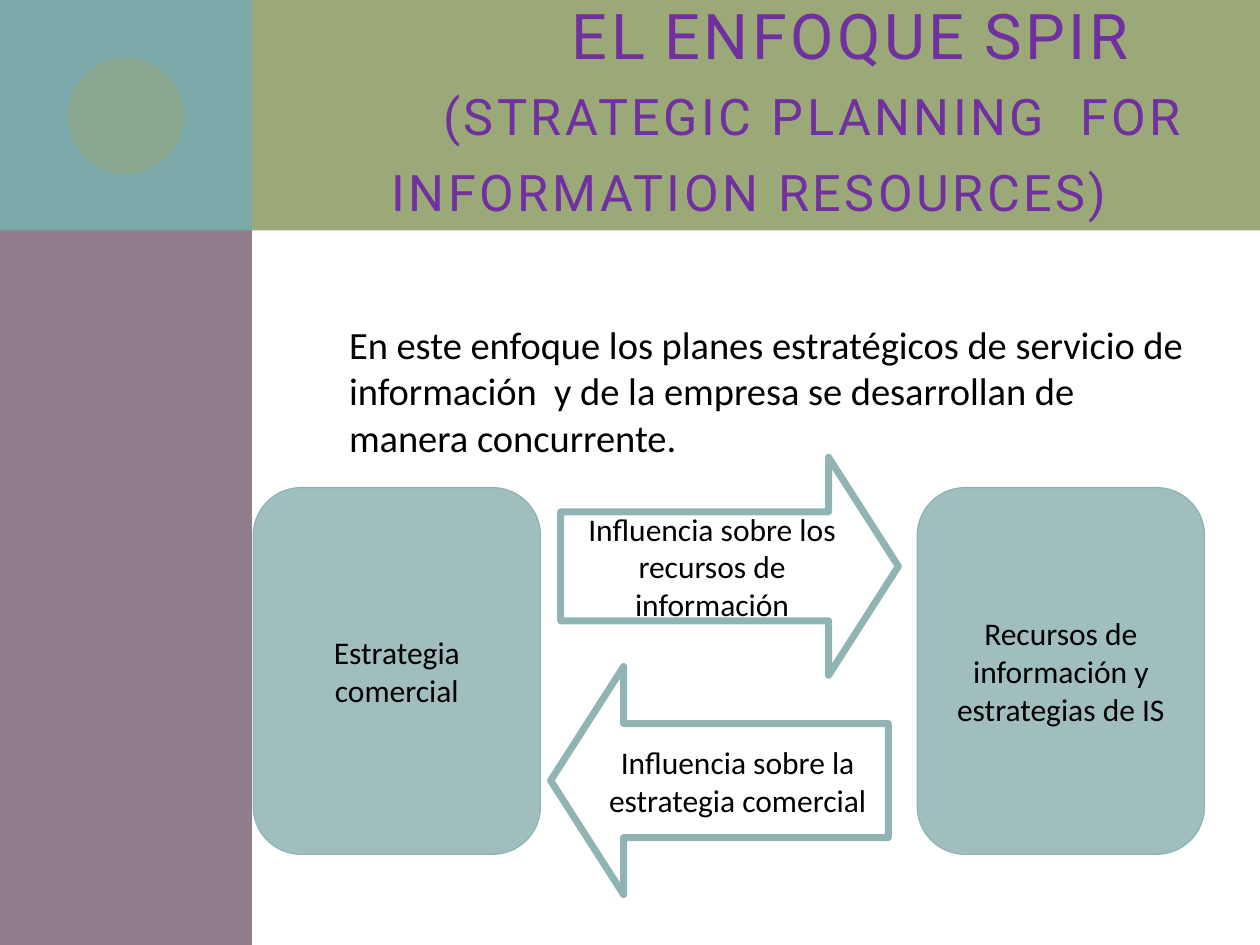
import pptx
import pptx.util
import pptx.dml.color
import pptx.enum.shapes
import pptx.enum.text
import pptx.oxml
import pptx.oxml.ns

Inches, Pt = pptx.util.Inches, pptx.util.Pt
RGBColor = pptx.dml.color.RGBColor
SHAPE = pptx.enum.shapes.MSO_SHAPE
ALIGN = pptx.enum.text.PP_ALIGN
ANCHOR = pptx.enum.text.MSO_ANCHOR
qn = pptx.oxml.ns.qn

OLIVE = RGBColor(0x9A, 0xA9, 0x77)
MAUVE = RGBColor(0x90, 0x7E, 0x8C)
TEAL = RGBColor(0x7B, 0xA8, 0xA9)
PURPLE = RGBColor(0x70, 0x30, 0xA0)
BLACK = RGBColor(0, 0, 0)
WHITE = RGBColor(0xFF, 0xFF, 0xFF)
BOX_FILL = RGBColor(0xA1, 0xBE, 0xBE)
BOX_LINE = RGBColor(0x8F, 0xB4, 0xB5)
ARROW_LINE = RGBColor(0x90, 0xB3, 0xB4)

# Content
TITLE = "EL ENFOQUE SPIR\v(strategic planning  for information resources)"
BODY = ("En este enfoque los planes estratégicos de servicio de información  "
        "y de la empresa se desarrollan de manera concurrente.")
BANDS = [  # preset, place, fill
    (SHAPE.RECTANGLE, (0.5, 0, 9.5, 1.83), OLIVE),
    (SHAPE.RECTANGLE, (0, 0, 2, 7.5), MAUVE),
    (SHAPE.RECTANGLE, (0, 0, 2, 1.83), TEAL),
    (SHAPE.OVAL, (0.54, 0.46, 0.92, 0.92), OLIVE),
]
BOXES = [  # left, text
    (2.01, "Estrategia comercial"),
    (7.28, "Recursos de información y estrategias de IS"),
]
ARROWS = [  # preset, place, text
    (SHAPE.RIGHT_ARROW, (4.45, 3.63, 2.68, 1.73),
     "Influencia sobre los recursos de información"),
    (SHAPE.LEFT_ARROW, (4.37, 5.29, 2.68, 1.81),
     "Influencia sobre la estrategia comercial"),
]


def set_font(paragraph, name, size, color):
    paragraph.font.name = name
    paragraph.font.size = Pt(size)
    paragraph.font.color.rgb = color


def add_shape(preset, place, fill):
    shape = slide.shapes.add_shape(preset, *map(Inches, place))
    shape.shadow.inherit = False
    shape.fill.solid()
    shape.fill.fore_color.rgb = fill
    shape.line.fill.background()
    return shape


def add_labelled(preset, place, fill, line, width, text):
    shape = add_shape(preset, place, fill)
    shape.line.color.rgb = line
    shape.line.width = Pt(width)
    frame = shape.text_frame
    frame.word_wrap = True
    frame.vertical_anchor = ANCHOR.MIDDLE
    frame.text = text
    frame.paragraphs[0].alignment = ALIGN.CENTER
    set_font(frame.paragraphs[0], "Calibri", 18, BLACK)
    return shape


def fill_placeholder(holder, place, text, anchor):
    holder.left, holder.top, holder.width, holder.height = map(Inches, place)
    frame = holder.text_frame
    frame.text = text
    frame.word_wrap = True
    frame.auto_size = pptx.enum.text.MSO_AUTO_SIZE.NONE
    frame.vertical_anchor = anchor
    return frame.paragraphs[0]


deck = pptx.Presentation()
deck.slide_width, deck.slide_height = Inches(10), Inches(7.5)
slide = deck.slides.add_slide(deck.slide_layouts[1])
title, body = slide.placeholders

# Background bands, moved behind the placeholders
for position, (preset, place, fill) in enumerate(BANDS):
    band = add_shape(preset, place, fill)
    slide.shapes._spTree.insert(2 + position, band._element)
circle_color = band._element.spPr.find(qn("a:solidFill"))[0]
pptx.oxml.ns  # namespace helpers for the transparency below
alpha = circle_color.makeelement(qn("a:alpha"), {"val": "50000"})
circle_color.append(alpha)

# Title in spaced small capitals
heading = fill_placeholder(title, (2.67, 0.25, 6.83, 1.25), TITLE, ANCHOR.MIDDLE)
heading.alignment = ALIGN.RIGHT
set_font(heading, "Roboto", 36, PURPLE)
for run in heading.runs:
    properties = run._r.get_or_add_rPr()
    properties.set("cap", "small")
    properties.set("spc", "200")

# Introductory paragraph without a bullet
intro = fill_placeholder(body, (2.67, 2.5, 6.83, 4.2), BODY, ANCHOR.TOP)
intro.space_before = Pt(18)
set_font(intro, "Calibri", 22, BLACK)
layout = intro._p.get_or_add_pPr()
layout.set("marL", "0")
layout.set("indent", "0")
no_bullet = layout.makeelement(qn("a:buNone"), {})
layout.find(qn("a:spcBef")).addnext(no_bullet)

# Strategy boxes and the arrows between them
for left, text in BOXES:
    add_labelled(SHAPE.ROUNDED_RECTANGLE, (left, 3.87, 2.28, 2.91),
                 BOX_FILL, BOX_LINE, 0.75, text)
for preset, place, text in ARROWS:
    arrow = add_labelled(preset, place, WHITE, ARROW_LINE, 4, text)
    arrow.adjustments[0], arrow.adjustments[1] = 0.5, 0.32

deck.save("out.pptx")
